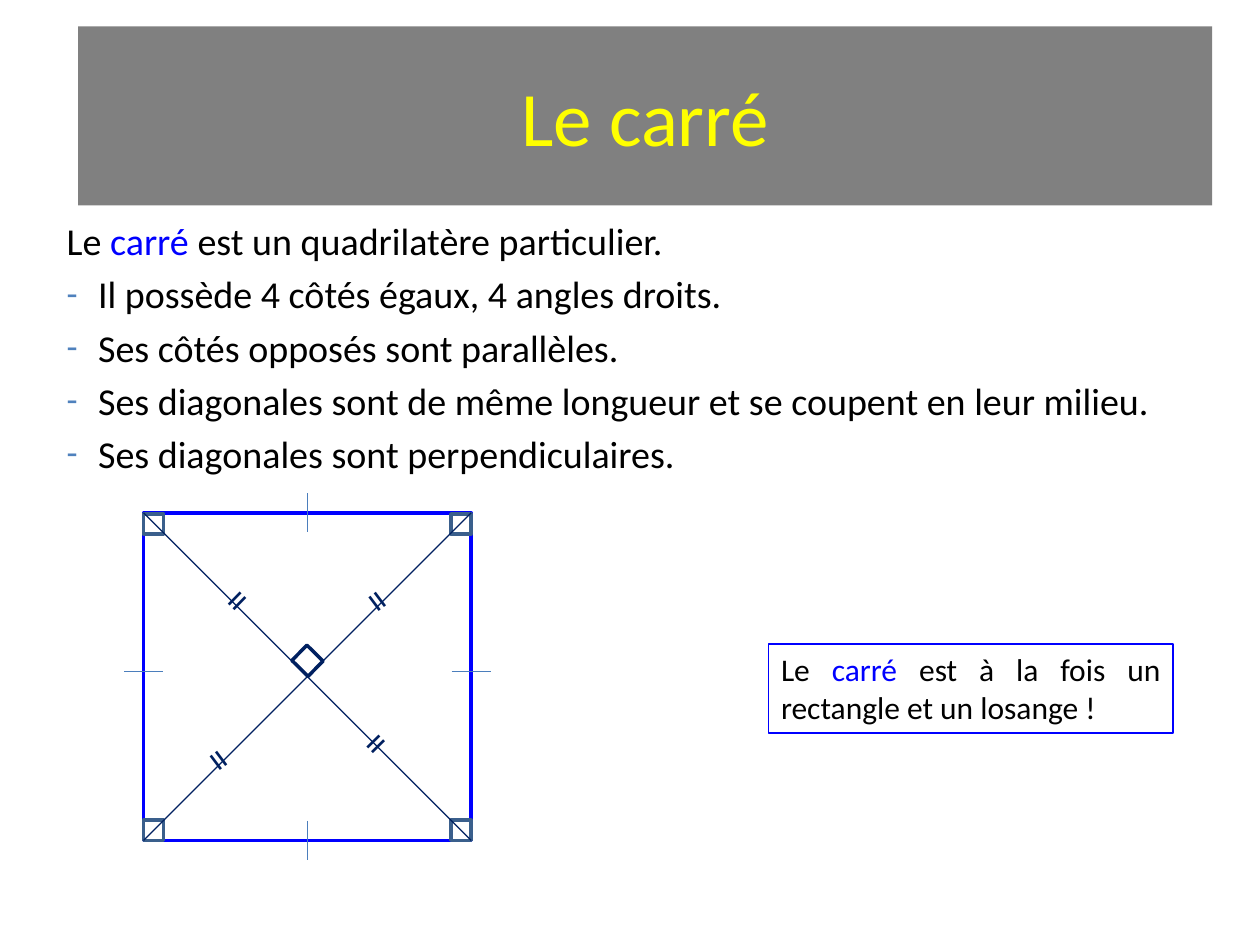
from lxml import etree
from pptx import Presentation
from pptx import util as u
from pptx.dml.color import RGBColor
from pptx.enum import shapes, text
from pptx.oxml import ns

COLORS = {
    "banner": "808080", "title": "FFFF00", "body": "000000", "key": "0000FF",
    "bullet": "4F81BD", "tick": "4B7EBC", "corner": "3A5F8C", "diagonal": "002060",
}
FONT = "Calibri"

# Square geometry, in inches
LEFT, TOP, SIDE = 1.14, 4.07, 2.6
RIGHT, BOTTOM = LEFT + SIDE, TOP + SIDE
MID_X, MID_Y = LEFT + SIDE / 2, 5.33
CORNER, TICK = 0.16, 0.31

PROPERTIES = [
    "Il possède 4 côtés égaux, 4 angles droits.",
    "Ses côtés opposés sont parallèles.",
    "Ses diagonales sont de même longueur et se coupent en leur milieu.",
    "Ses diagonales sont perpendiculaires.",
]
# Centre and rotation of each equal-length mark
EQUAL_MARKS = [(3.0, 4.74, 53.1), (1.74, 6.0, 53.1), (3.02, 5.91, 135.4), (1.92, 4.77, 134.2)]


def rgb(name):
    return RGBColor.from_string(COLORS[name])


def inches(*values):
    return [u.Inches(value) for value in values]


def apply_format(target, values):
    for name, value in values.items():
        setattr(target, name, value)


def add_run(paragraph, words, size, color="body"):
    run = paragraph.add_run()
    run.text = words
    apply_format(run.font, {"name": FONT, "size": u.Pt(size)})
    run.font.color.rgb = rgb(color)


def add_key_sentence(paragraph, ending, size):
    add_run(paragraph, "Le ", size)
    add_run(paragraph, "carré", size, "key")
    add_run(paragraph, ending, size)


def add_outline(slide, left, top, width, height, color, weight):
    outline = slide.shapes.add_shape(
        shapes.MSO_SHAPE.RECTANGLE, *inches(left, top, width, height))
    outline.shadow.inherit = False
    outline.fill.background()
    outline.line.color.rgb = rgb(color)
    outline.line.width = u.Pt(weight)
    return outline


def add_segment(slide, x1, y1, x2, y2, color):
    segment = slide.shapes.add_connector(
        shapes.MSO_CONNECTOR.STRAIGHT, *inches(x1, y1, x2, y2))
    segment.line.color.rgb = rgb(color)
    segment.line.width = u.Pt(0.75)
    etree.SubElement(segment._element.spPr, ns.qn("a:effectLst"))


def add_dash_bullet(paragraph):
    props = paragraph._p.get_or_add_pPr()
    props.set("marL", str(u.Inches(0.25)))
    props.set("indent", str(-u.Inches(0.25)))
    color = etree.SubElement(props, ns.qn("a:buClr"))
    etree.SubElement(color, ns.qn("a:srgbClr"), val=COLORS["bullet"])
    etree.SubElement(props, ns.qn("a:buSzPct"), val="95000")
    etree.SubElement(props, ns.qn("a:buFont"), typeface=FONT)
    etree.SubElement(props, ns.qn("a:buChar"), char="-")


def add_title(slide):
    title = slide.shapes.title
    left, top, width, height = inches(0.62, 0.21, 9, 1.42)
    apply_format(title, {"left": left, "top": top, "width": width, "height": height})
    title.fill.solid()
    title.fill.fore_color.rgb = rgb("banner")
    title.text_frame.vertical_anchor = text.MSO_ANCHOR.MIDDLE
    heading = title.text_frame.paragraphs[0]
    heading.alignment = text.PP_ALIGN.CENTER
    add_run(heading, "Le carré", 44, "title")


def add_properties(slide):
    frame = slide.shapes.add_textbox(*inches(0.43, 1.68, 9.29, 2.07)).text_frame
    frame.word_wrap = True
    intro = frame.paragraphs[0]
    intro.space_before = u.Pt(4.3)
    add_key_sentence(intro, " est un quadrilatère particulier.", 21.7)
    for fact in PROPERTIES:
        line = frame.add_paragraph()
        line.space_before = u.Pt(4.3)
        add_dash_bullet(line)
        add_run(line, fact, 21.7)


def add_conclusion(slide):
    frame = add_outline(slide, 6.1, 5.11, 3.21, 0.71, "key", 1).text_frame
    apply_format(frame, {"word_wrap": True, "vertical_anchor": text.MSO_ANCHOR.TOP})
    conclusion = frame.paragraphs[0]
    conclusion.alignment = text.PP_ALIGN.JUSTIFY
    add_key_sentence(conclusion, " est à la fois un rectangle et un losange !", 18)


def add_equal_mark(slide, x, y, angle):
    width, height = 0.31, 0.5
    mark = slide.shapes.add_textbox(*inches(x - width / 2, y - height / 2, width, height))
    mark.rotation = angle
    mark.text_frame.word_wrap = False
    sign = mark.text_frame.paragraphs[0]
    sign.alignment = text.PP_ALIGN.CENTER
    add_run(sign, "=", 24, "diagonal")


def add_square(slide):
    add_outline(slide, LEFT, TOP, SIDE, SIDE, "key", 2)

    # Ticks across the four sides
    for y in (TOP, BOTTOM):
        add_segment(slide, MID_X, y - TICK / 2, MID_X, y + TICK / 2, "tick")
    for x in (LEFT, RIGHT):
        add_segment(slide, x - TICK / 2, MID_Y, x + TICK / 2, MID_Y, "tick")

    # Right angles in the corners
    for x in (LEFT, RIGHT - CORNER):
        for y in (TOP + 0.01, BOTTOM - CORNER):
            add_outline(slide, x, y, CORNER, CORNER, "corner", 2)

    # Diagonals, their right angle and their equal halves
    add_segment(slide, LEFT, TOP, RIGHT, BOTTOM, "diagonal")
    add_segment(slide, RIGHT, TOP, LEFT, BOTTOM, "diagonal")
    add_outline(slide, 2.35, 5.16, 0.18, 0.17, "diagonal", 2).rotation = 44.8
    for x, y, angle in EQUAL_MARKS:
        add_equal_mark(slide, x, y, angle)


def main():
    deck = Presentation()
    apply_format(deck, {"slide_width": u.Inches(10), "slide_height": u.Inches(7.5)})
    slide = deck.slides.add_slide(deck.slide_layouts[5])
    add_title(slide)
    add_properties(slide)
    add_conclusion(slide)
    add_square(slide)
    deck.save("out.pptx")


if __name__ == "__main__":
    main()
